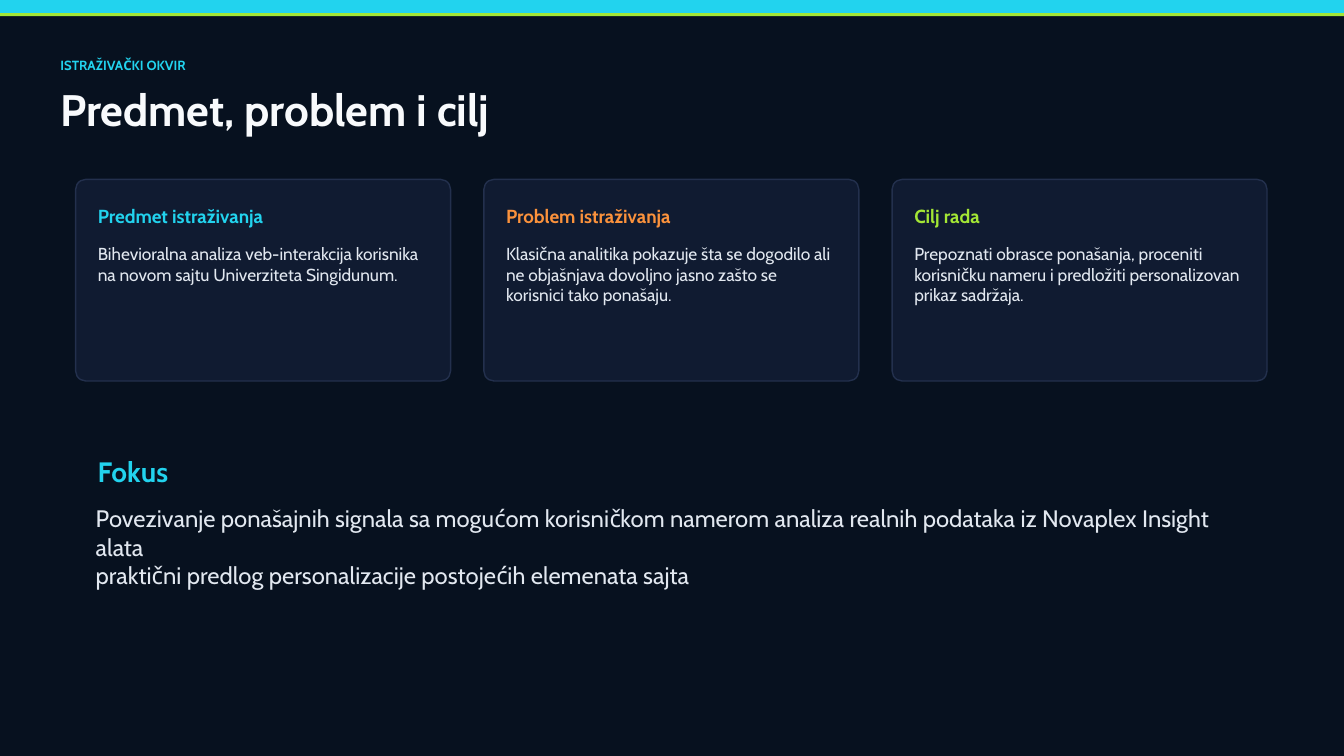
from pptx import Presentation
from pptx.dml.color import RGBColor
from pptx.enum.shapes import MSO_SHAPE
from pptx.enum.text import MSO_ANCHOR
from pptx.util import Pt

NIGHT = RGBColor(0x07, 0x11, 0x1F)
PANEL = RGBColor(0x10, 0x1B, 0x31)
EDGE = RGBColor(0x23, 0x30, 0x4D)
CYAN = RGBColor(0x22, 0xD3, 0xEE)
LIME = RGBColor(0xA3, 0xE6, 0x35)
ORANGE = RGBColor(0xFB, 0x92, 0x3C)
WHITE = RGBColor(0xF8, 0xFA, 0xFC)
MIST = RGBColor(0xE2, 0xE8, 0xF0)

WIDTH, HEIGHT = 960, 540
GAP = 23.76

CARDS = [
    ("Predmet istraživanja", CYAN,
     "Bihevioralna analiza veb-interakcija korisnika na novom sajtu "
     "Univerziteta Singidunum."),
    ("Problem istraživanja", ORANGE,
     "Klasična analitika pokazuje šta se dogodilo ali ne objašnjava dovoljno "
     "jasno zašto se korisnici tako ponašaju."),
    ("Cilj rada", LIME,
     "Prepoznati obrasce ponašanja, proceniti korisničku nameru i predložiti "
     "personalizovan prikaz sadržaja."),
]
FOCUS = [
    "Povezivanje ponašajnih signala sa mogućom korisničkom namerom analiza "
    "realnih podataka iz Novaplex Insight alata",
    "praktični predlog personalizacije postojećih elemenata sajta",
]


def add_text(slide, box, lines, size, color, bold=False):
    frame = slide.shapes.add_textbox(*map(Pt, box)).text_frame
    layout = {
        "word_wrap": True,
        "vertical_anchor": MSO_ANCHOR.MIDDLE if bold else MSO_ANCHOR.TOP,
        "margin_left": 0, "margin_top": 0,
        "margin_right": 0, "margin_bottom": 0,
    }
    for name, value in layout.items():
        setattr(frame, name, value)
    style = {"name": "Cabin", "size": Pt(size), "bold": bold}
    for index, line in enumerate(lines):
        para = frame.add_paragraph() if index else frame.paragraphs[0]
        run = para.add_run()
        run.text = line
        for name, value in style.items():
            setattr(run.font, name, value)
        run.font.color.rgb = color


def add_block(slide, kind, box, fill):
    shape = slide.shapes.add_shape(kind, *map(Pt, box))
    shape.shadow.inherit = False
    shape.fill.solid()
    shape.fill.fore_color.rgb = fill
    shape.line.fill.background()
    return shape


def add_bars(slide, left, top, width):
    add_block(slide, MSO_SHAPE.RECTANGLE, (left, top, width, 9.36), CYAN)
    add_block(slide, MSO_SHAPE.RECTANGLE, (left, top + 9.36, width, 2.16), LIME)


def add_head(slide, left, top, width):
    add_text(slide, (left, top, width, 18.72),
             ["ISTRAŽIVAČKI OKVIR"], 9.5, CYAN, True)
    add_text(slide, (left, top + 23.04, width, 34.56),
             ["Predmet, problem i cilj"], 31.5, WHITE, True)


def add_card(slide, box, title, color, body):
    left, top, width, height = box
    card = add_block(slide, MSO_SHAPE.ROUNDED_RECTANGLE, box, PANEL)
    card.adjustments[0] = 0.05
    card.line.color.rgb = EDGE
    card.line.width = Pt(1)
    pad = 15.84
    inner = width - 2 * pad
    add_text(slide, (left + pad, top + 14.4, inner, 23.04),
             [title], 13.5, color, True)
    add_text(slide, (left + pad, top + 45.36, inner, height - 54),
             [body], 12.4, MIST)


def add_cards(slide, left, top, width, height):
    count = len(CARDS)
    size = (width - GAP * (count - 1)) / count
    for index, card in enumerate(CARDS):
        box = (left + index * (size + GAP), top, size, height)
        add_card(slide, box, *card)


def add_focus(slide, left, top, width):
    add_text(slide, (left + 1.44, top, 144, 20.16), ["Fokus"], 20, CYAN, True)
    add_text(slide, (left, top + 33.12, width, 90), FOCUS, 17, MIST)


def main():
    deck = Presentation()
    deck.slide_width, deck.slide_height = Pt(WIDTH), Pt(HEIGHT)
    slide = deck.slides.add_slide(deck.slide_layouts[6])
    slide.background.fill.solid()
    slide.background.fill.fore_color.rgb = NIGHT
    add_bars(slide, 0, 0, WIDTH)
    add_head(slide, 43.2, 37.44, 568.8)
    add_cards(slide, 54, 128.16, 851.04, 144)
    add_focus(slide, 68.4, 326.88, 806.4)
    deck.save("out.pptx")


if __name__ == "__main__":
    main()
